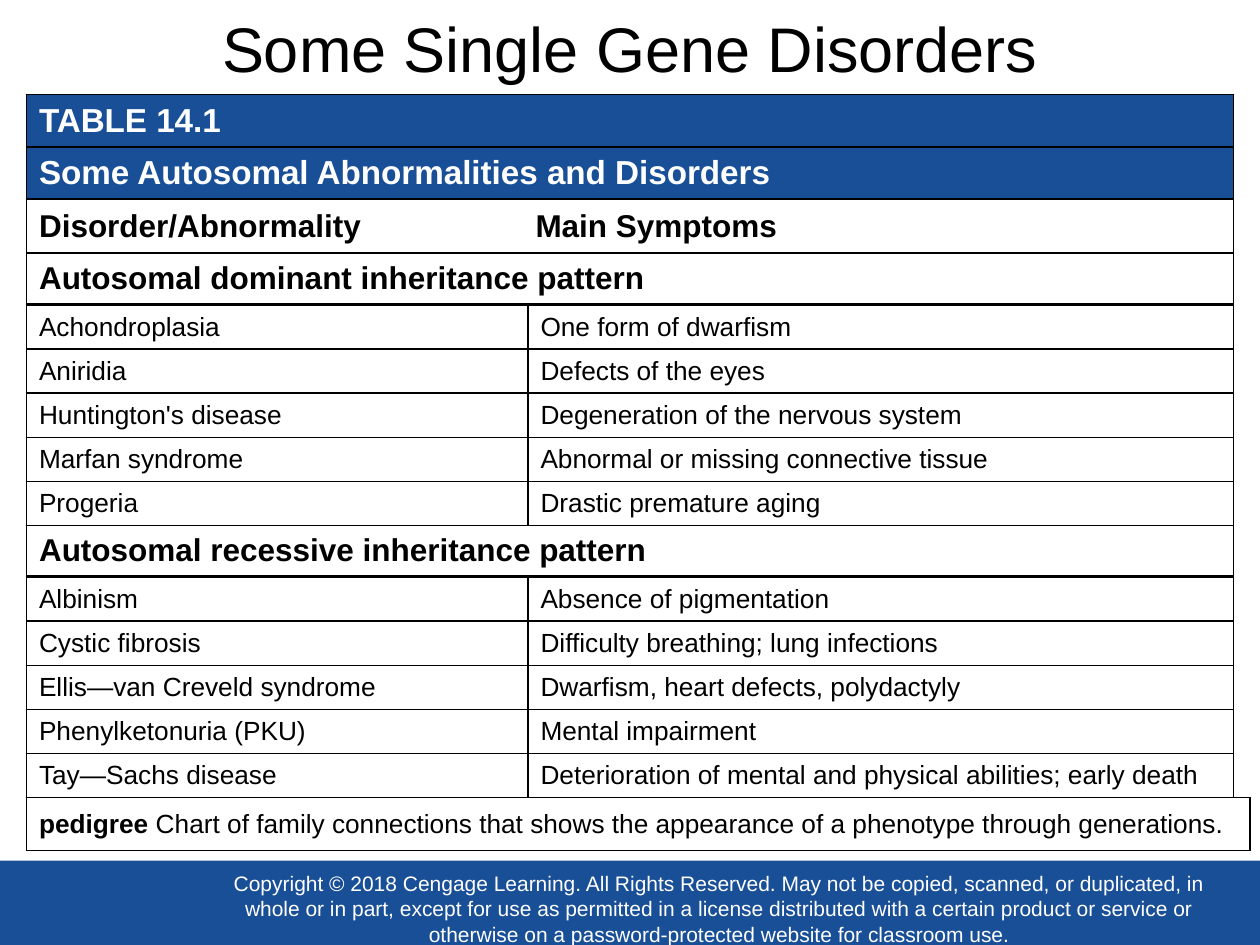
from lxml.etree import SubElement
from pptx import Presentation
from pptx.dml.color import RGBColor
from pptx.enum.shapes import MSO_SHAPE
from pptx.enum.text import MSO_ANCHOR, PP_ALIGN
from pptx.oxml.ns import qn
from pptx.util import Inches, Pt

BLUE, WHITE, BLACK = "194F97", "FFFFFF", "000000"
FONT = "Arial"
LEFT, WIDTH = 0.21, 9.58
COLUMNS = [3.98, 5.6]
BODY_ROW = 0.34

DOMINANT = [
    ("Achondroplasia", "One form of dwarfism"),
    ("Aniridia", "Defects of the eyes"),
    ("Huntington's disease", "Degeneration of the nervous system"),
    ("Marfan syndrome", "Abnormal or missing connective tissue"),
    ("Progeria", "Drastic premature aging"),
]
RECESSIVE = [
    ("Albinism", "Absence of pigmentation"),
    ("Cystic fibrosis", "Difficulty breathing; lung infections"),
    ("Ellis—van Creveld syndrome", "Dwarfism, heart defects, polydactyly"),
    ("Phenylketonuria (PKU)", "Mental impairment"),
    ("Tay—Sachs disease",
     "Deterioration of mental and physical abilities; early death"),
]
COPYRIGHT = (
    "Copyright © 2018 Cengage Learning. All Rights Reserved. May not be "
    "copied, scanned, or duplicated, in whole or in part, except for use as "
    "permitted in a license distributed with a certain product or service or "
    "otherwise on a password-protected website for classroom use."
)


def rgb(color):
    return RGBColor.from_string(color)


def add_run(p, text, size, color=BLACK, bold=False):
    r = p.add_run()
    r.text = text
    r.font.name = FONT
    r.font.size = Pt(size)
    r.font.bold = bold
    r.font.color.rgb = rgb(color)


def add_bar(s, x, y, w, h):
    sp = s.shapes.add_shape(
        MSO_SHAPE.RECTANGLE, Inches(x), Inches(y), Inches(w), Inches(h))
    sp.shadow.inherit = False
    sp.fill.solid()
    sp.fill.fore_color.rgb = rgb(BLUE)
    sp.line.fill.background()
    return sp


def set_centered_text(sp, text, size, color, margin=None):
    tf = sp.text_frame
    tf.word_wrap = True
    tf.vertical_anchor = MSO_ANCHOR.MIDDLE
    if margin is not None:
        tf.margin_left = tf.margin_right = Inches(margin)
        tf.margin_top = tf.margin_bottom = Inches(margin)
    p = tf.paragraphs[0]
    p.alignment = PP_ALIGN.CENTER
    add_run(p, text, size, color)


def set_borders(cell):
    tc_pr = cell._tc.get_or_add_tcPr()
    for index, side in enumerate(("lnL", "lnR", "lnT", "lnB")):
        ln = tc_pr.makeelement(qn(f"a:{side}"), {"w": str(Pt(1))})
        fill = SubElement(ln, qn("a:solidFill"))
        SubElement(fill, qn("a:srgbClr"), val=BLACK)
        tc_pr.insert(index, ln)


def add_grid(s, y, height, columns, row_heights, rows, size,
             color=BLACK, bold=False, fill=None):
    frame = s.shapes.add_table(
        len(rows), len(columns), Inches(LEFT), Inches(y),
        Inches(sum(columns)), Inches(height))
    table = frame.table
    table.first_row = table.horz_banding = False
    for column, width in zip(table.columns, columns):
        column.width = Inches(width)
    for row, row_height, texts in zip(table.rows, row_heights, rows):
        row.height = Inches(row_height)
        for cell, text in zip(row.cells, texts):
            cell.vertical_anchor = MSO_ANCHOR.MIDDLE
            if fill:
                cell.fill.solid()
                cell.fill.fore_color.rgb = rgb(fill)
            else:
                cell.fill.background()
            set_borders(cell)
            if text:
                add_run(cell.text_frame.paragraphs[0], text, size, color, bold)
    frame.height = Inches(height)
    return table


def add_disorders(s, y, rows):
    add_grid(s, y, 1.75, COLUMNS, [BODY_ROW] * len(rows), rows, 15)


def add_tab_stop(p, position):
    tabs = SubElement(p._p.get_or_add_pPr(), qn("a:tabLst"))
    SubElement(tabs, qn("a:tab"), pos=str(Inches(position)), algn="l")


def add_headings(s):
    table = add_grid(s, 1.58, 0.83, [WIDTH], [0.43, 0.35],
                     [("",), ("Autosomal dominant inheritance pattern",)],
                     18, bold=True, fill=WHITE)
    p = table.cell(0, 0).text_frame.paragraphs[0]
    add_tab_stop(p, 3.94)
    add_run(p, "Disorder/Abnormality\tMain Symptoms", 18, bold=True)


def add_definition(s):
    table = add_grid(s, 6.33, 0.42, [9.71], [0.42], [("",)], 15, fill=WHITE)
    p = table.cell(0, 0).text_frame.paragraphs[0]
    add_run(p, "pedigree", 15, bold=True)
    add_run(p, " Chart of family connections that shows the appearance of a "
               "phenotype through generations.", 15)


def main():
    prs = Presentation()
    prs.slide_width, prs.slide_height = Inches(10), Inches(7.5)
    s = prs.slides.add_slide(prs.slide_layouts[6])

    add_bar(s, -0.01, 6.83, 10.01, 0.68)
    notice = add_bar(s, 1.67, 6.92, 8.08, 0.58)
    set_centered_text(notice, COPYRIGHT, 12, WHITE, margin=0)
    title = s.shapes.add_textbox(
        Inches(0.61), Inches(0), Inches(8.78), Inches(0.75))
    set_centered_text(title, "Some Single Gene Disorders", 36, BLACK)

    add_grid(s, 0.75, 0.83, [WIDTH], [0.35, 0.35],
             [("TABLE 14.1",), ("Some Autosomal Abnormalities and Disorders",)],
             19, WHITE, bold=True, fill=BLUE)
    add_headings(s)
    add_disorders(s, 2.42, DOMINANT)
    add_grid(s, 4.17, 0.4, [WIDTH], [0.3],
             [("Autosomal recessive inheritance pattern",)],
             18, bold=True, fill=WHITE)
    add_disorders(s, 4.58, RECESSIVE)
    add_definition(s)
    prs.save("out.pptx")


if __name__ == "__main__":
    main()
